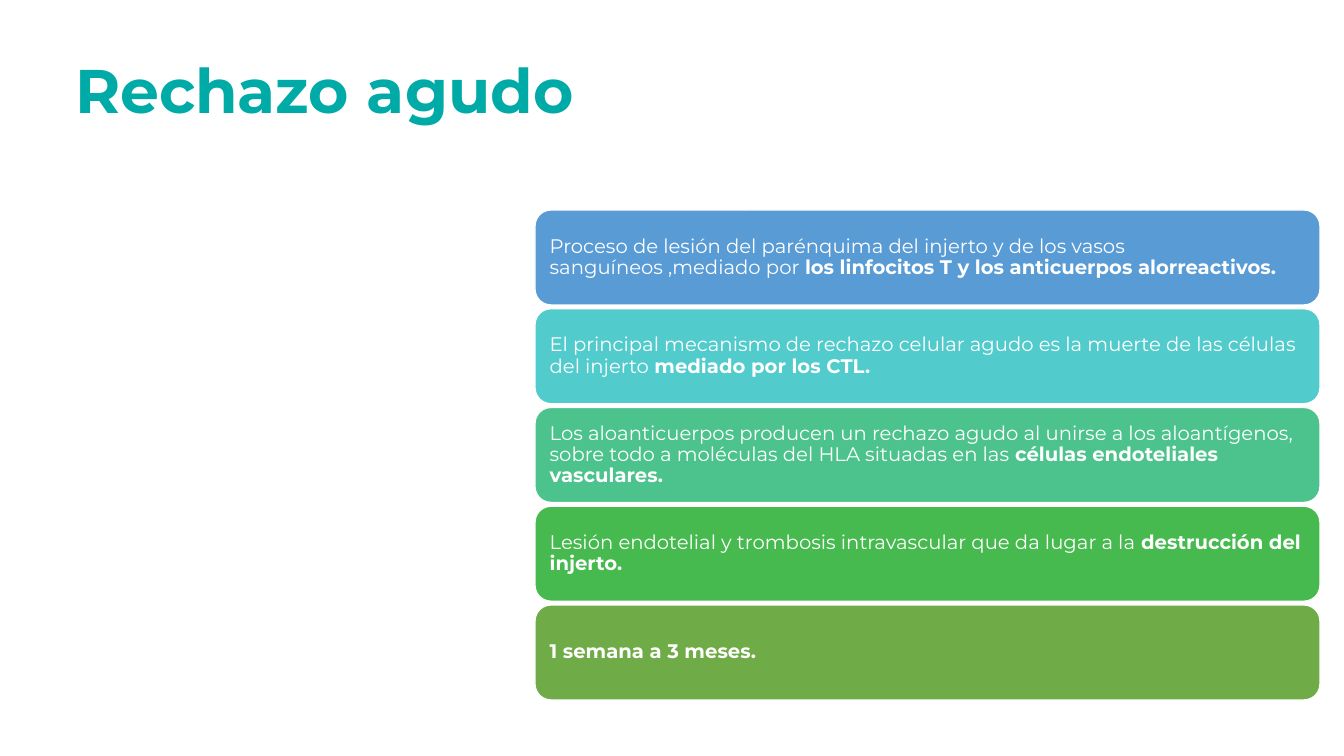
from dataclasses import dataclass

from pptx import Presentation
from pptx.dml.color import RGBColor
from pptx.enum.shapes import MSO_SHAPE
from pptx.enum.text import MSO_ANCHOR, PP_ALIGN
from pptx.util import Pt

TITLE = "Rechazo agudo"

# Each card: plain text, then bold text
CARDS = [
    ("Proceso de lesión del parénquima del injerto y de los vasos sanguíneos ,mediado por ",
     "los linfocitos T y los anticuerpos alorreactivos."),
    ("El principal mecanismo de rechazo celular agudo es la muerte de las células del injerto ",
     "mediado por los CTL."),
    ("Los aloanticuerpos producen un rechazo agudo al unirse a los aloantígenos, "
     "sobre todo a moléculas del HLA situadas en las ",
     "células endoteliales vasculares."),
    ("Lesión endotelial y trombosis intravascular que da lugar a la ",
     "destrucción del injerto."),
    ("", "1 semana a 3 meses."),
]


@dataclass(frozen=True)
class Theme:
    font: str = "Montserrat"
    title_size: int = 44
    card_size: int = 14
    line_width: int = 1
    line_spacing: float = 0.9
    title: str = "00AAA7"
    white: str = "FFFFFF"
    cards: tuple = ("599BD5", "52CBCC", "4CC38C", "46BA4E", "6FAB46")


THEME = Theme()
EMU_PER_PX = 914400 / 100.8

SLIDE_SIZE = (1344, 756)
TITLE_BOX = (65, 21, 1159, 146)
STACK_LEFT, STACK_TOP, STACK_BOTTOM = 535, 210, 700
CARD_WIDTH, CARD_HEIGHT = 785, 95
CARD_ROUNDING = 0.167


def px(length):
    return round(length * EMU_PER_PX)


def write(box, spans, size, color, inset_x, inset_y):
    """Fill a box with one paragraph made of (text, bold) spans."""
    frame = box.text_frame
    frame.word_wrap = True
    frame.vertical_anchor = MSO_ANCHOR.MIDDLE
    frame.margin_left = frame.margin_right = px(inset_x)
    frame.margin_top = frame.margin_bottom = px(inset_y)
    para = frame.paragraphs[0]
    para.alignment = PP_ALIGN.LEFT
    para.line_spacing = THEME.line_spacing
    for text, bold in spans:
        if not text:
            continue
        span = para.add_run()
        span.text = text
        span.font.name = THEME.font
        span.font.size = Pt(size)
        span.font.bold = bold
        span.font.color.rgb = RGBColor.from_string(color)


def add_card(page, top, fill, plain, bold):
    card = page.shapes.add_shape(
        MSO_SHAPE.ROUNDED_RECTANGLE,
        px(STACK_LEFT), px(top), px(CARD_WIDTH), px(CARD_HEIGHT))
    card.adjustments[0] = CARD_ROUNDING
    card.shadow.inherit = False
    card.fill.solid()
    card.fill.fore_color.rgb = RGBColor.from_string(fill)
    card.line.color.rgb = RGBColor.from_string(THEME.white)
    card.line.width = Pt(THEME.line_width)
    write(card, [(plain, False), (bold, True)], THEME.card_size, THEME.white, 10, 10)


def main():
    deck = Presentation()
    deck.slide_width, deck.slide_height = map(px, SLIDE_SIZE)
    page = deck.slides.add_slide(deck.slide_layouts[6])

    title_box = page.shapes.add_textbox(*map(px, TITLE_BOX))
    write(title_box, [(TITLE, True)], THEME.title_size, THEME.title, 10, 5)

    pitch = (STACK_BOTTOM - STACK_TOP - CARD_HEIGHT) / (len(CARDS) - 1)
    for row, ((plain, bold), fill) in enumerate(zip(CARDS, THEME.cards)):
        add_card(page, STACK_TOP + row * pitch, fill, plain, bold)

    deck.save("out.pptx")


if __name__ == "__main__":
    main()
